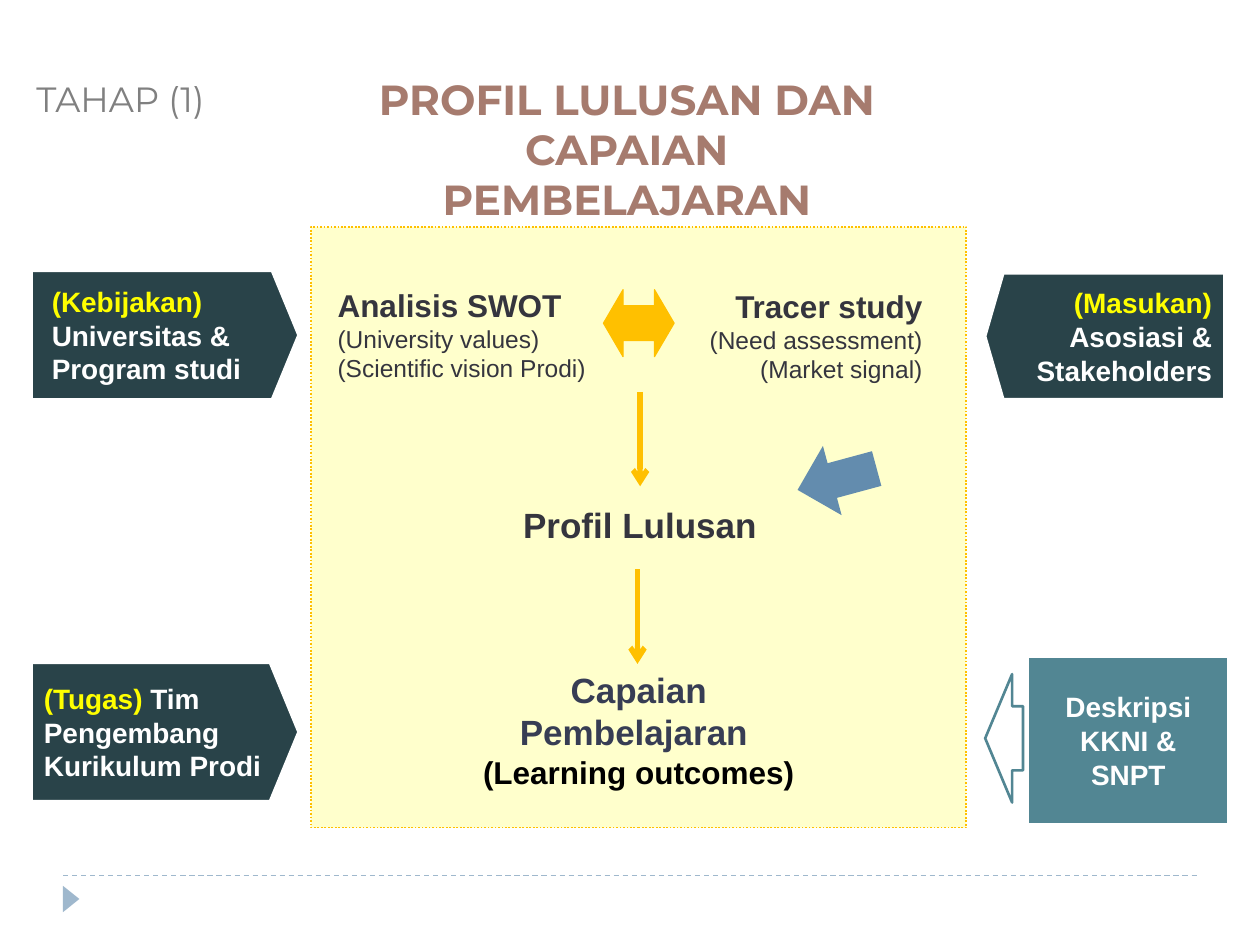
from dataclasses import dataclass

from lxml import etree
from pptx import Presentation
from pptx.dml.color import RGBColor
from pptx.enum.dml import MSO_LINE
from pptx.enum.shapes import MSO_CONNECTOR, MSO_SHAPE
from pptx.enum.text import MSO_ANCHOR, MSO_AUTO_SIZE, PP_ALIGN
from pptx.oxml.ns import qn
from pptx.util import Pt

LEFT, CENTER, RIGHT = PP_ALIGN.LEFT, PP_ALIGN.CENTER, PP_ALIGN.RIGHT
TOP, MIDDLE = MSO_ANCHOR.TOP, MSO_ANCHOR.MIDDLE
DASH, DOT = MSO_LINE.DASH, MSO_LINE.ROUND_DOT
RECTANGLE, PENTAGON, TRIANGLE = MSO_SHAPE.RECTANGLE, MSO_SHAPE.PENTAGON, MSO_SHAPE.ISOSCELES_TRIANGLE
LEFT_ARROW, DOUBLE_ARROW = MSO_SHAPE.LEFT_ARROW, MSO_SHAPE.LEFT_RIGHT_ARROW

WHITE, YELLOW, GOLD, CREAM = "FFFFFF", "FFFF00", "FFC000", "FFFFCC"
DARK_TEAL, TEAL, MIST, STEEL = "294349", "528693", "9FB8CD", "638CAE"
INK, NAVY, BLACK, GREY, BROWN = "35353E", "373D54", "000000", "808080", "A67B6E"


@dataclass(frozen=True)
class Span:
    text: str
    size: float
    color: str
    bold: bool = True
    font: str = "Arial"


@dataclass(frozen=True)
class Line:
    spans: tuple[Span, ...]
    align: PP_ALIGN = LEFT
    indent: float = 0


@dataclass(frozen=True)
class Figure:
    kind: MSO_SHAPE
    area: tuple[float, float, float, float]
    fill: str | None = None
    outline: str | None = None
    weight: float = 1.5
    dash: MSO_LINE | None = None
    adjust: tuple[float, ...] = ()
    rotation: float = 0
    flipped: bool = False
    lines: tuple[Line, ...] = ()


@dataclass(frozen=True)
class Label:
    area: tuple[float, float, float, float]
    lines: tuple[Line, ...]
    anchor: MSO_ANCHOR = TOP


@dataclass(frozen=True)
class Stroke:
    start: tuple[float, float]
    end: tuple[float, float]
    color: str
    weight: float
    dash: MSO_LINE | None = None
    arrow: bool = False


def rgb(value: str) -> RGBColor:
    return RGBColor.from_string(value)


def tag(text: str) -> Span:
    return Span(text, 16, YELLOW)


def plain(text: str) -> Span:
    return Span(text, 16, WHITE)


def topic(heading: str, details: tuple[str, ...], align: PP_ALIGN) -> tuple[Line, ...]:
    body = tuple(Line((Span(detail, 14, INK, False),), align) for detail in details)
    return (Line((Span(heading, 18, INK),), align), *body)


def write(frame, lines: tuple[Line, ...], anchor: MSO_ANCHOR) -> None:
    frame.word_wrap = True
    frame.vertical_anchor = anchor
    for index, line in enumerate(lines):
        para = frame.add_paragraph() if index else frame.paragraphs[0]
        para.text = line.spans[0].text
        for span in line.spans[1:]:
            para.add_run().text = span.text
        para.alignment = line.align
        if line.indent:
            properties = para._p.get_or_add_pPr()
            properties.set("marL", str(Pt(line.indent)))
            properties.set("indent", "0")
        for run, span in zip(para.runs, line.spans):
            run.font.name = span.font
            run.font.size = Pt(span.size)
            run.font.bold = span.bold
            run.font.color.rgb = rgb(span.color)


def draw_figure(page, figure: Figure) -> None:
    shape = page.shapes.add_shape(figure.kind, *map(Pt, figure.area))
    shape.shadow.inherit = False
    shape.rotation = figure.rotation
    for index, value in enumerate(figure.adjust):
        shape.adjustments[index] = value
    if figure.fill:
        shape.fill.solid()
        shape.fill.fore_color.rgb = rgb(figure.fill)
    else:
        shape.fill.background()
    if figure.outline:
        shape.line.color.rgb = rgb(figure.outline)
        shape.line.width = Pt(figure.weight)
        if figure.dash:
            shape.line.dash_style = figure.dash
    else:
        shape.line.fill.background()
    if figure.flipped:
        shape._element.spPr.find(qn("a:xfrm")).set("flipH", "1")
    if figure.lines:
        write(shape.text_frame, figure.lines, MIDDLE)


def draw_label(page, label: Label) -> None:
    box = page.shapes.add_textbox(*map(Pt, label.area))
    write(box.text_frame, label.lines, label.anchor)
    box.text_frame.auto_size = MSO_AUTO_SIZE.SHAPE_TO_FIT_TEXT


def draw_stroke(page, stroke: Stroke) -> None:
    ends = map(Pt, (*stroke.start, *stroke.end))
    connector = page.shapes.add_connector(MSO_CONNECTOR.STRAIGHT, *ends)
    connector.line.color.rgb = rgb(stroke.color)
    connector.line.width = Pt(stroke.weight)
    if stroke.dash:
        connector.line.dash_style = stroke.dash
    if stroke.arrow:
        etree.SubElement(connector.line._get_or_add_ln(), qn("a:tailEnd"), type="arrow")
    etree.SubElement(connector._element.spPr, qn("a:effectLst"))


FIGURES = (
    Figure(TRIANGLE, (33.1, 509, 15.1, 9.4), MIST, rotation=90),
    Figure(RECTANGLE, (177.8, 129.6, 374.4, 343.4), CREAM, GOLD, 1, DOT),
    Figure(DOUBLE_ARROW, (344.9, 165.6, 40.3, 38.2), GOLD, GOLD, 0.75, adjust=(0.522, 0.293)),
    Figure(PENTAGON, (18, 154.8, 152.6, 73.4), DARK_TEAL, WHITE, adjust=(0.206,), lines=(
        Line((tag("(Kebijakan) "), plain("Universitas &")), indent=4.5),
        Line((plain("Program studi"),), indent=4.5))),
    Figure(PENTAGON, (563, 156.2, 136.8, 72), DARK_TEAL, WHITE, adjust=(0.144,), flipped=True, lines=(
        Line((tag("(Masukan) "), plain("Asosiasi & Stakeholders")), RIGHT, 9),)),
    Figure(PENTAGON, (18, 378.7, 152.6, 79.2), DARK_TEAL, WHITE, adjust=(0.206,), lines=(
        Line((tag("(Tugas)"), plain(" Tim Pengembang Kurikulum Prodi"))),)),
    Figure(LEFT_ARROW, (563, 385.2, 21.6, 73.4), outline=TEAL, adjust=(0.5, 0.713)),
    Figure(RECTANGLE, (587.5, 375.1, 114.5, 95.8), TEAL, WHITE, lines=(
        Line((plain("Deskripsi KKNI & SNPT"),), CENTER),)),
    Figure(LEFT_ARROW, (455, 253.4, 46.8, 41), STEEL, adjust=(0.5, 0.501), rotation=344.9),
)

LABELS = (
    Label((13.7, 41, 138.2, 31), (Line((Span("TAHAP (1)", 20, GREY, False, "Montserrat"),)),)),
    Label((188.2, 38.2, 340, 94.3), (
        Line((Span("PROFIL LULUSAN DAN CAPAIAN PEMBELAJARAN", 24, BROWN, True, "Montserrat"),), CENTER),)),
    Label((271.4, 284.4, 188.6, 31.7), (Line((Span("Profil Lulusan", 20, INK),), CENTER),)),
    Label((254.9, 378.7, 220.3, 77.8), (
        Line((Span("Capaian Pembelajaran ", 20, NAVY),), CENTER),
        Line((Span("(Learning outcomes)", 18, BLACK),), CENTER))),
    Label((395.3, 159.8, 139, 63.4),
          topic("Tracer study", ("(Need assessment)", "(Market signal)"), RIGHT), MIDDLE),
    Label((185.8, 159.8, 162, 63.4),
          topic("Analisis SWOT", ("(University values)", "(Scientific vision Prodi)"), LEFT)),
)

STROKES = (
    Stroke((36, 500.4), (684, 500.4), MIST, 0.75, dash=DASH),
    Stroke((365.8, 223.9), (365.8, 277.9), GOLD, 3, arrow=True),
    Stroke((364.3, 325.4), (364.3, 379.4), GOLD, 3, arrow=True),
)


def main() -> None:
    deck = Presentation()
    deck.slide_width, deck.slide_height = Pt(720), Pt(540)
    page = deck.slides.add_slide(deck.slide_layouts[6])
    for figure in FIGURES:
        draw_figure(page, figure)
    for label in LABELS:
        draw_label(page, label)
    for stroke in STROKES:
        draw_stroke(page, stroke)
    deck.save("out.pptx")


if __name__ == "__main__":
    main()
